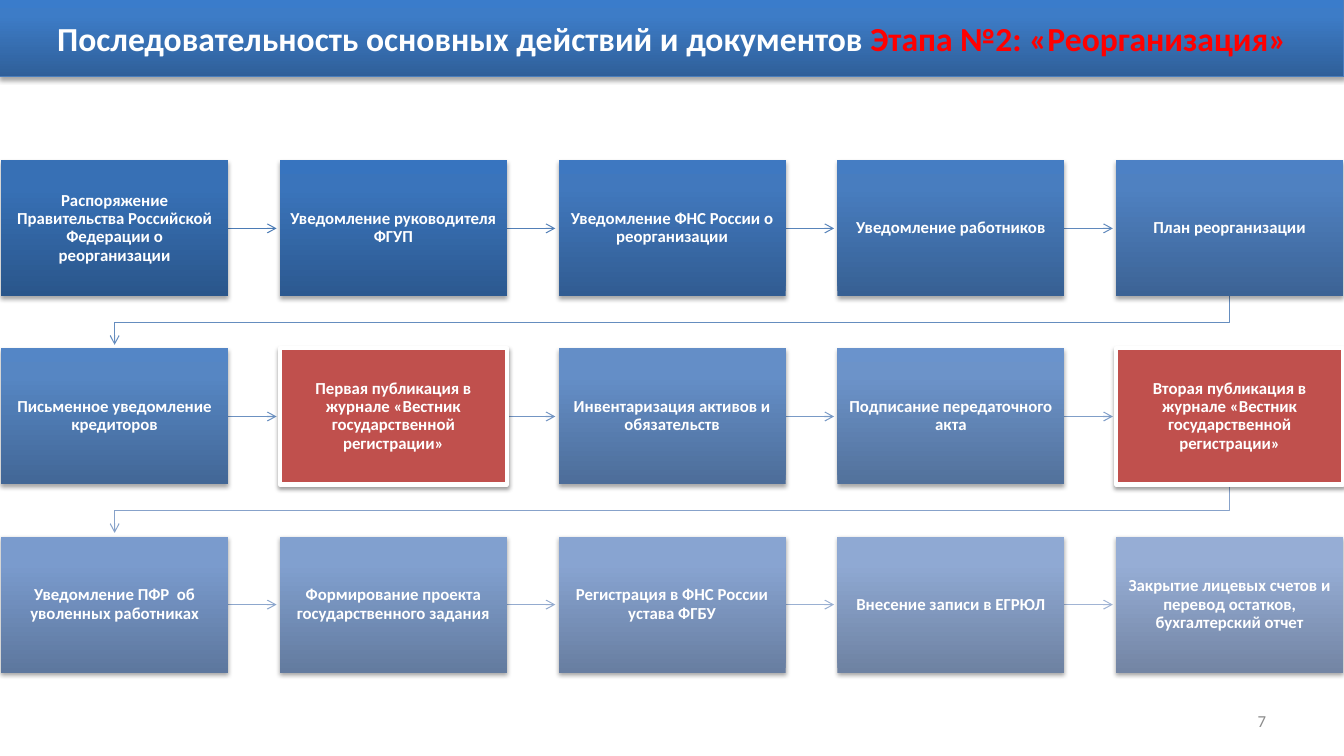
from pptx import Presentation
from pptx.dml.color import RGBColor
from pptx.enum.shapes import MSO_CONNECTOR, MSO_SHAPE
from pptx.enum.text import MSO_ANCHOR, PP_ALIGN
from pptx.oxml import parse_xml
from pptx.oxml.ns import nsdecls
from pptx.oxml.xmlchemy import OxmlElement
from pptx.util import Cm, Pt

WHITE = RGBColor(0xFF, 0xFF, 0xFF)
RED = RGBColor(0xFF, 0x00, 0x00)
BRICK = RGBColor(0xC0, 0x50, 0x4D)
GRAY = RGBColor(0x8C, 0x8C, 0x8C)
EDGE = RGBColor(0x4B, 0x7E, 0xBC)
HEAD = [RGBColor(0x2F, 0x5F, 0x99), RGBColor(0x3D, 0x7C, 0xC7), RGBColor(0x3A, 0x7C, 0xCB)]
FIRST = [RGBColor(0x2A, 0x56, 0x8B), RGBColor(0x37, 0x70, 0xB5), RGBColor(0x35, 0x70, 0xB8)]
DARK = [RGBColor(0x2C, 0x59, 0x90), RGBColor(0x3A, 0x74, 0xBB), RGBColor(0x37, 0x74, 0xBF)]
LIGHT = [RGBColor(0x73, 0x85, 0xA4), RGBColor(0x96, 0xAD, 0xD5), RGBColor(0x95, 0xAD, 0xD7)]
ARROWS = RGBColor(0x4B, 0x7B, 0xB5), RGBColor(0xA1, 0xB4, 0xD4)

COLS = 5
KEY = {6, 9}
STEPS = [
    "Распоряжение Правительства Российской Федерации о реорганизации",
    "Уведомление руководителя ФГУП",
    "Уведомление ФНС России о реорганизации",
    "Уведомление работников",
    "План реорганизации",
    "Письменное уведомление кредиторов",
    "Первая публикация в журнале «Вестник государственной регистрации»",
    "Инвентаризация активов и обязательств",
    "Подписание передаточного акта",
    "Вторая публикация в журнале «Вестник государственной регистрации»",
    "Уведомление ПФР  об уволенных работниках",
    "Формирование проекта государственного задания",
    "Регистрация в ФНС России устава ФГБУ",
    "Внесение записи в ЕГРЮЛ",
    "Закрытие лицевых счетов и перевод остатков, бухгалтерский отчет",
]


def blend(start, end, part):
    """Return the colour that lies at the given part between two colours."""
    return RGBColor(*(round(a + (b - a) * part) for a, b in zip(start, end)))


def shade(shape, tones):
    """Fill a new shape with a three-stop gradient that rises from its foot."""
    stops = "".join(
        f'<a:gs pos="{pos}000"><a:srgbClr val="{tone}"/></a:gs>'
        for pos, tone in zip((0, 80, 100), tones))
    shape._element.spPr.insert(2, parse_xml(
        f'<a:gradFill {nsdecls("a")} rotWithShape="1"><a:gsLst>{stops}</a:gsLst>'
        '<a:lin ang="16200000" scaled="0"/></a:gradFill>'))


def drop(shape, alpha, dist):
    """Give a shape a soft shadow below it."""
    shape.shadow.inherit = False
    effects = shape._element.spPr.find(OxmlElement("a:effectLst").tag)
    effects.append(parse_xml(
        f'<a:outerShdw {nsdecls("a")} blurRad="40000" dist="{dist}" dir="5400000" rotWithShape="0">'
        f'<a:srgbClr val="000000"><a:alpha val="{alpha}000"/></a:srgbClr></a:outerShdw>'))


def write(shape, runs, size, align, bold=True, inset=None, space=None):
    """Write one paragraph of coloured runs into a shape."""
    frame = shape.text_frame
    layout = {"word_wrap": True, "vertical_anchor": MSO_ANCHOR.MIDDLE}
    if inset is not None:
        layout |= {f"margin_{side}": inset for side in ("left", "top", "right", "bottom")}
    for name, value in layout.items():
        setattr(frame, name, value)
    para = frame.paragraphs[0]
    for name, value in {"alignment": align, "line_spacing": space}.items():
        setattr(para, name, value)
    for text, color in runs:
        run = para.add_run()
        run.text = text
        run.font.color.rgb = color
        for name, value in {"name": "Calibri", "size": Pt(size), "bold": bold}.items():
            setattr(run.font, name, value)


def point(slide, arrow, color):
    """Style a line as a thin arrow and send it behind the boxes."""
    arrow.line.color.rgb = color
    arrow.line.width = Pt(0.75)
    tip = OxmlElement("a:tailEnd")
    tip.set("type", "arrow")
    arrow.line._get_or_add_ln().append(tip)
    slide.shapes._spTree.insert(2, arrow._element)


def title(slide, left, top, width, height):
    """Draw the header band."""
    band = slide.shapes.add_shape(MSO_SHAPE.RECTANGLE, left, top, width, height)
    shade(band, HEAD)
    band.line.color.rgb = EDGE
    band.line.width = Pt(0.75)
    drop(band, 35, 23000)
    write(band, [("Последовательность основных действий и документов ", WHITE),
                 ("Этапа №2: «Реорганизация»", RED)], 24, PP_ALIGN.CENTER)


def step(slide, order, left, top, width, height):
    """Draw one step of the chain and return its box."""
    box = slide.shapes.add_shape(MSO_SHAPE.RECTANGLE, left, top, width, height)
    if order in KEY:
        box.fill.solid()
        box.fill.fore_color.rgb = BRICK
        box.line.color.rgb = WHITE
        box.line.width = Pt(3)
        drop(box, 38, 20000)
    else:
        part = (order - 1) / (len(STEPS) - 2)
        shade(box, [blend(a, b, part) for a, b in zip(DARK, LIGHT)] if order else FIRST)
        box.line.fill.background()
        drop(box, 35, 23000)
    write(box, [(STEPS[order], WHITE)], 12, PP_ALIGN.CENTER, inset=Cm(0.23), space=0.9)
    return box


def link(slide, box, color, reach):
    """Draw a straight arrow from the right side of a box."""
    left, mid = box.left + box.width, box.top + box.height // 2
    arrow = slide.shapes.add_connector(MSO_CONNECTOR.STRAIGHT, left, mid, left + reach, mid)
    arrow.begin_connect(box, 3)
    point(slide, arrow, color)
    arrow._element.spPr.append(OxmlElement("a:effectLst"))


def wrap(slide, box, color, reach, start):
    """Draw a bent arrow from the foot of a box to the start of the next row."""
    mid, foot = box.left + box.width // 2, box.top + box.height
    bend = foot + Cm(0.66)
    pen = slide.shapes.build_freeform(mid, foot)
    pen.add_line_segments([(mid, bend), (start, bend), (start, foot + reach)], close=False)
    arrow = pen.convert_to_shape()
    arrow.fill.background()
    arrow.shadow.inherit = False
    point(slide, arrow, color)


def chain(slide, left, top, width, height):
    """Draw the rows of steps and the arrows that join them."""
    rows = len(STEPS) // COLS
    wide, high, reach = Cm(5.72), Cm(3.43), Cm(1.22)
    across = (width - wide) // (COLS - 1)
    down = (height - high) // (rows - 1)
    last = len(STEPS) - 1
    for order in range(len(STEPS)):
        row, col = divmod(order, COLS)
        box = step(slide, order, left + col * across, top + row * down, wide, high)
        color = blend(*ARROWS, order / (last - 1))
        if order == last:
            break
        if col < COLS - 1:
            link(slide, box, color, reach)
        else:
            wrap(slide, box, color, reach, left + wide // 2)


def folio(slide, left, top, width, height):
    """Write the page number."""
    box = slide.shapes.add_textbox(left, top, width, height)
    write(box, [("7", GRAY)], 12, PP_ALIGN.RIGHT, bold=False)


def main():
    """Build the slide and save it."""
    deck = Presentation()
    deck.slide_width, deck.slide_height = Cm(33.87), Cm(19.05)
    slide = deck.slides.add_slide(deck.slide_layouts[6])
    title(slide, 0, 0, deck.slide_width, Cm(1.94))
    chain(slide, Cm(0.03), Cm(4.04), Cm(33.82), Cm(12.91))
    folio(slide, Cm(24.26), Cm(17.65), Cm(7.9), Cm(1.02))
    deck.save("out.pptx")


if __name__ == "__main__":
    main()
